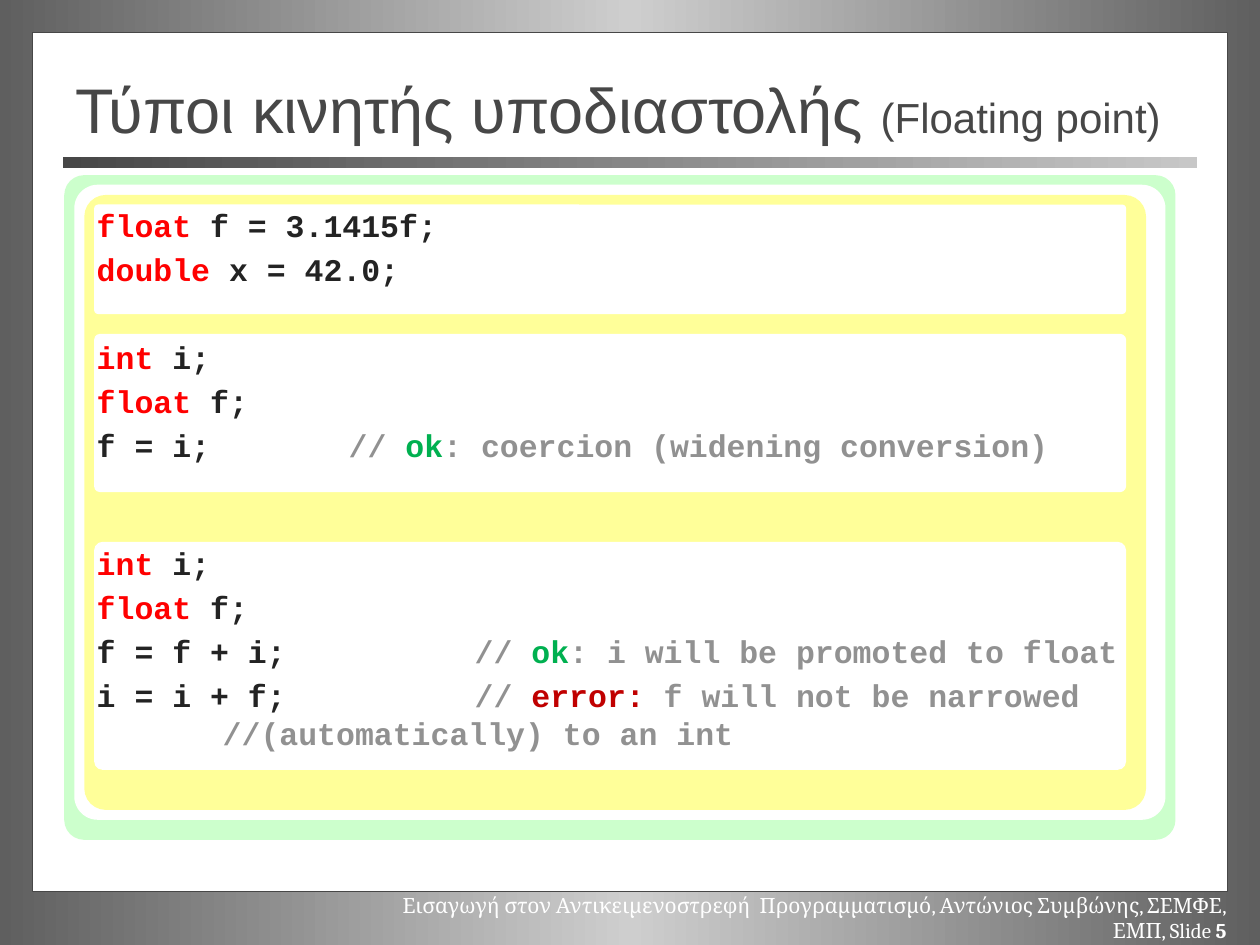
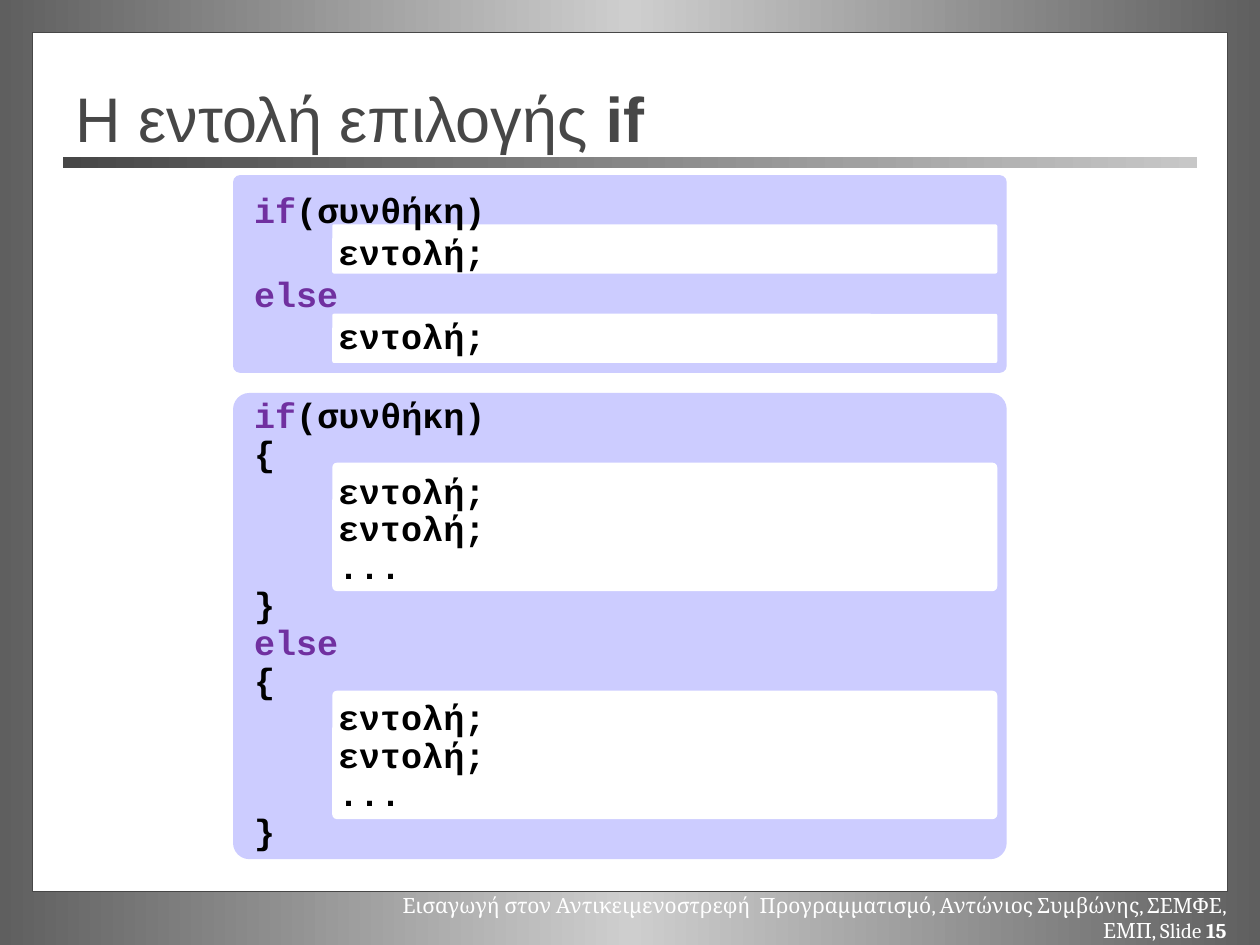
import copy

import lxml.etree
import pptx
import pptx.dml.color
import pptx.enum.shapes
import pptx.enum.text
import pptx.oxml.ns
import pptx.util

Pt = pptx.util.Pt
qn = pptx.oxml.ns.qn

WHITE = "FFFFFF"
BLACK = "000000"
DARK = "474747"
INK = "232323"
RED = "FF0000"
GREEN = "00B050"
CRIMSON = "C00000"
GREY = "919191"
PURPLE = "7030A0"
LILAC = "CCCCFF"
MINT = "CCFFCC"
YELLOW = "FFFF99"
FOOTER = "Εισαγωγή στον Αντικειμενοστρεφή  Προγραμματισμό, Αντώνιος Συμβώνης, ΣΕΜΦΕ, ΕΜΠ, Slide "


def rgb(colour):
    return pptx.dml.color.RGBColor.from_string(colour)


def write(paragraph, text, size=18, font="Courier New", colour=INK, bold=False):
    run = paragraph.add_run()
    run.text = text
    run.font.size = Pt(size)
    run.font.name = font
    run.font.bold = bold
    run.font.color.rgb = rgb(colour)


def paint_gradient(fill, element, colours):
    fill.gradient()
    fill.gradient_angle = 0
    stop_list = element.find(".//" + qn("a:gsLst"))
    while len(stop_list) < len(colours):
        stop_list.append(copy.deepcopy(stop_list[-1]))
    for index, (stop, colour) in enumerate(zip(fill.gradient_stops, colours)):
        stop.color.rgb = rgb(colour)
        stop.position = index / (len(colours) - 1)


def line(*runs, **layout):
    return runs, layout


class Deck:
    """Holds the shared style and the current slide."""

    def __init__(self):
        self.presentation = pptx.Presentation()
        self.presentation.slide_width = Pt(720)
        self.presentation.slide_height = Pt(540)
        self.slide = None

    def start_slide(self, number):
        self.slide = self.presentation.slides.add_slide(self.presentation.slide_layouts[5])
        paint_gradient(self.slide.background.fill, self.slide.element, ["5F5F5F", "CECECE", "5F5F5F"])
        frame = self.box(18.5, 18.5, 683, 491, WHITE)
        frame.line.color.rgb = rgb(DARK)
        frame.line.width = Pt(1)
        bar = self.box(36, 89.8, 648, 6, DARK)
        paint_gradient(bar.fill, bar.element, [DARK, "C7C7C7"])
        paragraph = self.text_frame(201, 506.5, 507, 21.6).paragraphs[0]
        paragraph.alignment = pptx.enum.text.PP_ALIGN.RIGHT
        write(paragraph, FOOTER, size=12, font="Cambria", colour=WHITE)
        write(paragraph, str(number), size=12, font="Cambria", colour=WHITE, bold=True)

    def box(self, left, top, width, height, colour, rounding=None):
        kinds = pptx.enum.shapes.MSO_SHAPE
        kind = kinds.RECTANGLE if rounding is None else kinds.ROUNDED_RECTANGLE
        shape = self.slide.shapes.add_shape(kind, Pt(left), Pt(top), Pt(width), Pt(height))
        if rounding is not None:
            shape.adjustments[0] = rounding
        shape.shadow.inherit = False
        shape.fill.solid()
        shape.fill.fore_color.rgb = rgb(colour)
        shape.line.fill.background()
        return shape

    def panels(self, left, width, spans, colour, rounding=0.037):
        for top, height in spans:
            self.box(left, top, width, height, colour, rounding)

    def text_frame(self, left, top, width, height):
        shape = self.slide.shapes.add_textbox(Pt(left), Pt(top), Pt(width), Pt(height))
        shape.text_frame.word_wrap = True
        return shape.text_frame

    def title(self, left, top, width, height, *runs):
        shape = self.slide.shapes.title
        shape.element.getparent().append(shape.element)
        shape.left, shape.top, shape.width, shape.height = Pt(left), Pt(top), Pt(width), Pt(height)
        frame = shape.text_frame
        frame.auto_size = pptx.enum.text.MSO_AUTO_SIZE.NONE
        frame.vertical_anchor = pptx.enum.text.MSO_ANCHOR.MIDDLE
        paragraph = frame.paragraphs[0]
        paragraph.alignment = pptx.enum.text.PP_ALIGN.LEFT
        for text, size, bold in runs:
            write(paragraph, text, size=size, font="Arial", colour=DARK, bold=bold)

    def code(self, left, top, width, height, lines, size, before=0, spacing=1.0):
        frame = self.text_frame(left, top, width, height)
        for index, (runs, layout) in enumerate(lines):
            paragraph = frame.add_paragraph() if index else frame.paragraphs[0]
            paragraph.space_before = Pt(layout.get("before", before))
            paragraph.line_spacing = spacing
            properties = paragraph._p.get_or_add_pPr()
            properties.set("marL", str(int(Pt(layout.get("indent", 0)))))
            if "tab" in layout:
                tabs = lxml.etree.SubElement(properties, qn("a:tabLst"))
                lxml.etree.SubElement(tabs, qn("a:tab"), pos=str(int(Pt(layout["tab"]))), algn="l")
            for text, colour in runs:
                write(paragraph, text, size=size, colour=colour, bold=True)


def build_floating_point(deck):
    deck.start_slide(5)
    deck.box(36.7, 100.1, 635, 379.8, MINT, 0.03)
    deck.box(42.5, 105.6, 623.5, 362.9, WHITE, 0.037)
    deck.box(48.2, 111.4, 606.7, 351.4, YELLOW, 0.035)
    deck.panels(53.8, 589.7, [(116.9, 62.6), (190.8, 90.4), (309.6, 130.3)], WHITE)
    deck.title(36, 39.6, 653.8, 44.6,
               ("Τύποι κινητής υποδιαστολής ", 36, False), ("(Floating point)", 24, False))
    declare_int = ("int ", RED), ("i;", INK)
    declare_float = line(("float", RED), (" f;", INK))
    slashes, ok = ("// ", GREY), ("ok", GREEN)
    deck.code(48.2, 114.2, 637.2, 327.6, [
        line(("float", RED), (" f = 3.1415f;", INK)),
        line(("double", RED), (" x = 42.0;", INK)),
        line(*declare_int, before=28.4),
        declare_float,
        line(("f = i;\t", INK), slashes, ok, (": coercion (widening conversion)", GREY), tab=144),
        line(*declare_int, before=45.8),
        declare_float,
        line(("f = f + i;\t", INK), slashes, ok, (": i will be promoted to float", GREY), tab=216),
        line(("i = i + f;\t", INK), slashes, ("error:", CRIMSON),
             (" f will not be narrowed", GREY), tab=216),
        line(("//(automatically) to an int", GREY), indent=72, before=0),
    ], size=18, before=3.6)


def build_if_statement(deck):
    deck.start_slide(15)
    deck.panels(133.2, 442.1, [(224.6, 266.4), (100.1, 113)], LILAC, 0.035)
    deck.panels(189.9, 380, [(128.2, 28.1), (179.3, 28.1), (264.4, 73.4), (394.7, 73.4)], WHITE)
    deck.title(36, 41.8, 612, 44.6,
               ("Η εντολή επιλογής ", 36, False), ("if", 36, True), (" ", 44, False))
    condition = line(("if", PURPLE), ("(συνθήκη)", BLACK))
    otherwise = line(("else", PURPLE))
    statement = line(("εντολή;", BLACK), indent=48)
    dots = line(("...", BLACK), indent=48)
    block = [line(("{", BLACK)), statement, statement, dots, line(("}", BLACK))]
    deck.code(138.2, 104.4, 432, 104.4, [condition, statement, otherwise, statement], size=20)
    deck.code(138.2, 224, 432, 267.8, [condition, *block, otherwise, *block], size=20, spacing=0.9)


def main():
    deck = Deck()
    build_floating_point(deck)
    build_if_statement(deck)
    deck.presentation.save("out.pptx")


if __name__ == "__main__":
    main()
